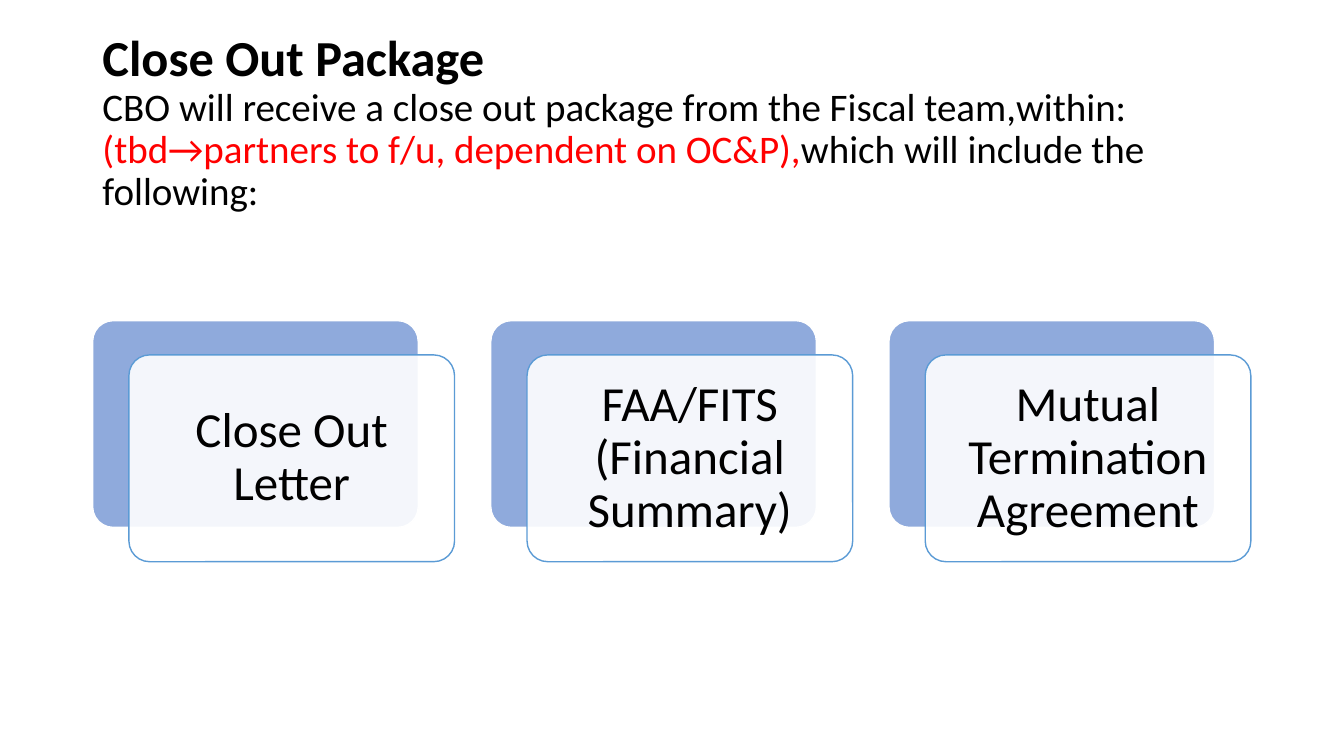
from lxml.etree import SubElement
from pptx import Presentation
from pptx.dml.color import RGBColor
from pptx.enum.shapes import MSO_SHAPE
from pptx.enum.text import MSO_ANCHOR, MSO_AUTO_SIZE, PP_ALIGN
from pptx.oxml.ns import qn
from pptx.util import Pt

BLACK = RGBColor(0x00, 0x00, 0x00)
WHITE = RGBColor(0xFF, 0xFF, 0xFF)
RED = RGBColor(0xFF, 0x00, 0x00)
PALE = RGBColor(0x8F, 0xAA, 0xDC)
BLUE = RGBColor(0x5B, 0x9B, 0xD5)

LABELS = ["Close Out Letter", "FAA/FITS (Financial Summary)",
          "Mutual Termination Agreement"]
LEFT, TOP, STEP = 66.2, 229, 284.4
WIDTH, HEIGHT = 232.6, 147.7
SHIFT_X, SHIFT_Y = 25.9, 24.5


def add_run(para, text, size, color=BLACK, bold=False):
    run = para.add_run()
    run.text = text
    run.font.name = "Calibri"
    run.font.size = Pt(size)
    run.font.bold = bold
    run.font.color.rgb = color


def set_title(slide):
    title = slide.shapes.title
    title.left, title.top = Pt(66), Pt(44)
    title.width, title.height = Pt(828), Pt(108)
    frame = title.text_frame
    frame.word_wrap = True
    frame.auto_size = MSO_AUTO_SIZE.NONE
    frame.vertical_anchor = MSO_ANCHOR.MIDDLE
    frame.margin_bottom = Pt(23)
    head = frame.paragraphs[0]
    add_run(head, "Close Out Package", 36, bold=True)
    body = frame.add_paragraph()
    add_run(body, "CBO will receive a close out package from the Fiscal "
                  "team,within: ", 27.9)
    add_run(body, "(tbd→partners to f/u, dependent on OC&P),", 27.9, RED)
    add_run(body, "which will include the following:", 27.9)
    for para in frame.paragraphs:
        para.alignment = PP_ALIGN.LEFT
        para.line_spacing = 0.9


def add_box(slide, left, top, fill, line):
    box = slide.shapes.add_shape(MSO_SHAPE.ROUNDED_RECTANGLE, Pt(left),
                                 Pt(top), Pt(WIDTH), Pt(HEIGHT))
    box.adjustments[0] = 0.1
    box.shadow.inherit = False
    box.fill.solid()
    box.fill.fore_color.rgb = fill
    box.line.color.rgb = line
    box.line.width = Pt(1)
    return box


def set_alpha(box, share):
    color = box.fill._xPr.find(qn("a:solidFill")).find(qn("a:srgbClr"))
    SubElement(color, qn("a:alpha")).set("val", str(share * 1000))


def add_card(slide, left, label):
    add_box(slide, left, TOP, PALE, WHITE)
    card = add_box(slide, left + SHIFT_X, TOP + SHIFT_Y, WHITE, BLUE)
    set_alpha(card, 90)
    frame = card.text_frame
    frame.word_wrap = True
    frame.vertical_anchor = MSO_ANCHOR.MIDDLE
    frame.margin_left = frame.margin_right = Pt(10.8)
    frame.margin_top = frame.margin_bottom = Pt(10.8)
    para = frame.paragraphs[0]
    para.alignment = PP_ALIGN.CENTER
    para.line_spacing = 0.9
    add_run(para, label, 35)


def main():
    deck = Presentation()
    deck.slide_width, deck.slide_height = Pt(960), Pt(540)
    slide = deck.slides.add_slide(deck.slide_layouts[5])
    set_title(slide)
    for index, label in enumerate(LABELS):
        add_card(slide, LEFT + index * STEP, label)
    deck.save("out.pptx")


if __name__ == "__main__":
    main()
